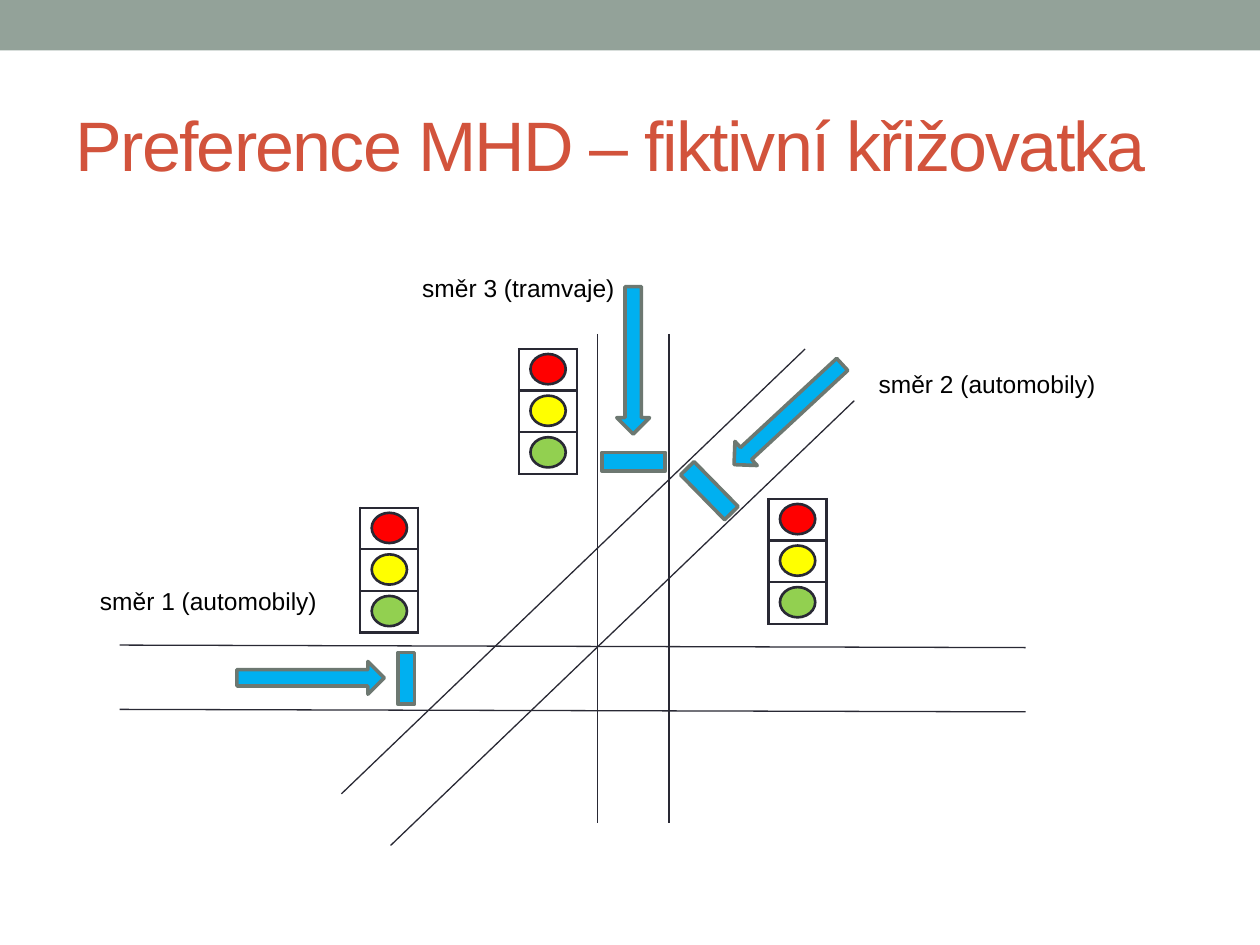
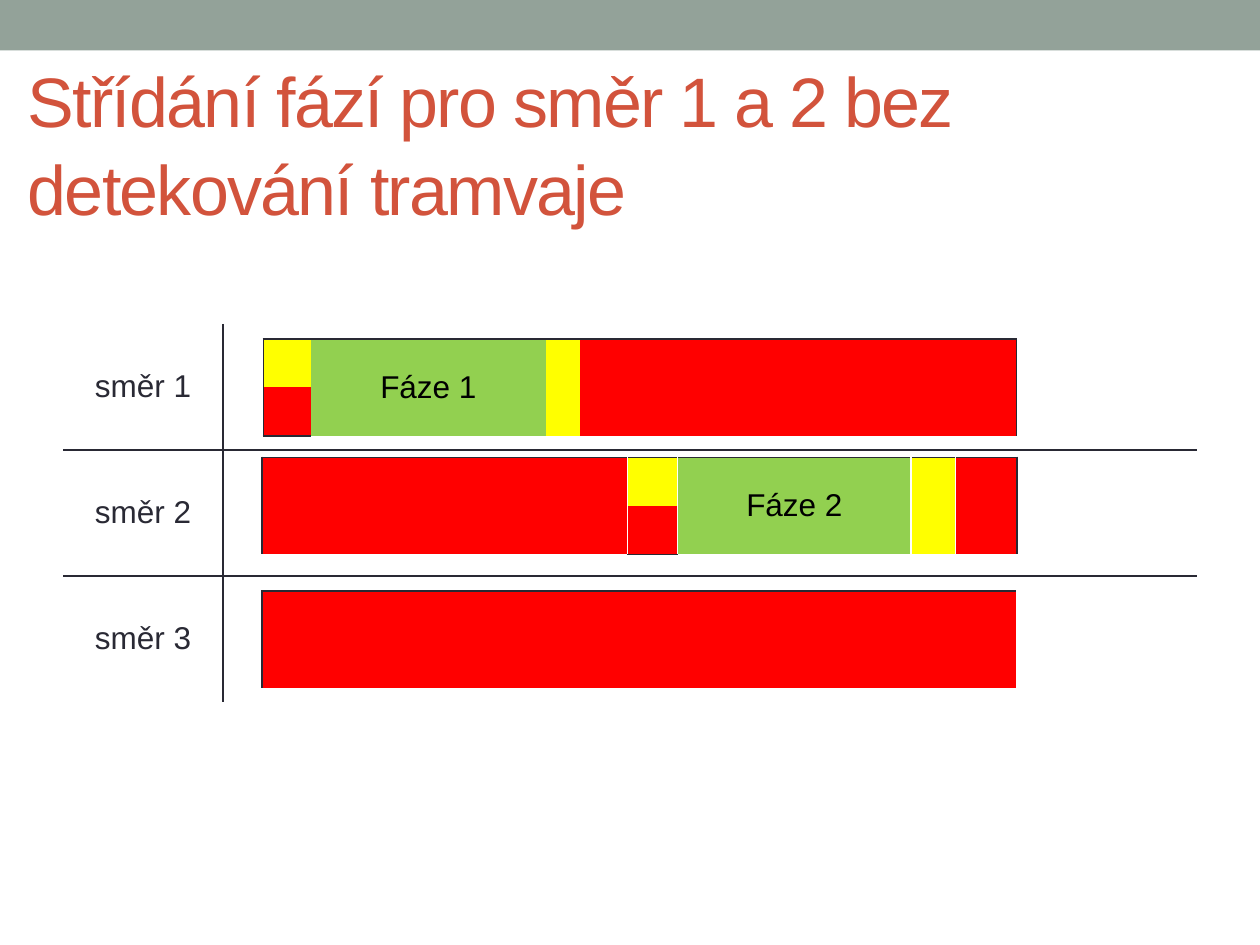
from lxml.etree import SubElement
from pptx import Presentation
from pptx.dml.color import RGBColor
from pptx.enum.shapes import MSO_CONNECTOR as Connector, MSO_SHAPE as Shape
from pptx.enum.text import MSO_ANCHOR as Anchor, MSO_AUTO_SIZE as AutoSize, PP_ALIGN as Align
from pptx.oxml.ns import qn
from pptx.util import Inches, Pt

FONT = "Arial"
BAND, TITLE, INK = "93A299", "D2533C", "292934"
BLACK, WHITE = "000000", "FFFFFF"
RED, YELLOW, GREEN = "FF0000", "FFFF00", "92D050"
BLUE, BLUE_EDGE = "00B0F0", "6D7871"
PLAIN_TABLE = "{2D5ABB26-0587-4C30-8999-92F81FD0307C}"


def rgb(code):
    return RGBColor.from_string(code)


def set_borders(cell, borders):
    """Draw cell borders; borders maps L, R, T, B to (colour, points)."""
    properties = cell._tc.get_or_add_tcPr()
    for side in "LRTB":
        if side in borders:
            color, width = borders[side]
            line = SubElement(properties, qn(f"a:ln{side}"), w=str(Pt(width)))
            fill = SubElement(line, qn("a:solidFill"))
            SubElement(fill, qn("a:srgbClr"), val=color)


class Deck:
    def __init__(self):
        self.deck = Presentation()
        self.deck.slide_width, self.deck.slide_height = Inches(10), Inches(7.5)
        self.page = None

    def add_text(self, frame, text, size, color, align=Align.CENTER):
        para = frame.paragraphs[0]
        para.alignment = align
        span = para.add_run()
        span.text = text
        span.font.size, span.font.name = Pt(size), FONT
        span.font.color.rgb = rgb(color)
        return para, span

    def add_page(self, title, left, width):
        self.page = self.deck.slides.add_slide(self.deck.slide_layouts[5])
        self.shape(Shape.RECTANGLE, 0, 0, 10, 0.4, BAND)
        box = self.page.shapes.title
        box.left, box.top = Inches(left), Inches(0.58)
        box.width, box.height = Inches(width), Inches(1.08)
        frame = box.text_frame
        frame.auto_size, frame.word_wrap = AutoSize.NONE, True
        frame.vertical_anchor = Anchor.MIDDLE
        para, span = self.add_text(frame, title, 40, TITLE, Align.LEFT)
        para.line_spacing = 1.05
        span.font._element.set("spc", "-100")

    def shape(self, kind, left, top, width, height, fill, edge=None, points=1.5, turn=0):
        shape = self.page.shapes.add_shape(
            kind, Inches(left), Inches(top), Inches(width), Inches(height))
        shape.shadow.inherit = False
        shape.rotation = turn
        shape.fill.solid()
        shape.fill.fore_color.rgb = rgb(fill)
        if edge:
            shape.line.color.rgb = rgb(edge)
            shape.line.width = Pt(points)
        else:
            shape.line.fill.background()

    def line(self, x1, y1, x2, y2):
        line = self.page.shapes.add_connector(
            Connector.STRAIGHT, Inches(x1), Inches(y1), Inches(x2), Inches(y2))
        line.line.color.rgb = rgb(INK)
        line.line.width = Pt(0.75)
        SubElement(line._element.spPr, qn("a:effectLst"))

    def label(self, text, left, top, width):
        box = self.page.shapes.add_textbox(
            Inches(left), Inches(top), Inches(width), Inches(0.34))
        box.text_frame.word_wrap = False
        self.add_text(box.text_frame, text, 14, BLACK)

    def table(self, left, top, widths, heights):
        frame = self.page.shapes.add_table(
            len(heights), len(widths), Inches(left), Inches(top),
            Inches(sum(widths)), Inches(sum(heights)))
        table = frame.table
        table._tbl.tblPr.find(qn("a:tableStyleId")).text = PLAIN_TABLE
        table.first_row = table.horz_banding = False
        for column, width in zip(table.columns, widths):
            column.width = Inches(width)
        for row, height in zip(table.rows, heights):
            row.height = Inches(height)
        for cell in table.iter_cells():
            cell.margin_top = cell.margin_bottom = 0
            cell.vertical_anchor = Anchor.MIDDLE
        return table

    def traffic_light(self, left, top):
        housing = self.table(left, top, [0.46], [0.33] * 3)
        for cell in housing.iter_cells():
            set_borders(cell, dict.fromkeys("LRTB", (INK, 1.5)))
            cell.fill.background()
        for index, color in enumerate((RED, YELLOW, GREEN)):
            self.shape(Shape.OVAL, left + 0.09, top + 0.04 + 0.33 * index,
                       0.28, 0.24, color, INK)

    def signal_bar(self, left, top, phases, separator=None, right=INK):
        """Each phase is (width, upper colour, lower colour, text)."""
        table = self.table(left, top, [phase[0] for phase in phases], [0.77 / 2] * 2)
        last = len(phases) - 1
        for column, (_, upper, lower, text) in enumerate(phases):
            for row, color in enumerate((upper, lower)):
                borders = {"TB"[row]: (INK, 1)}
                if separator:
                    borders.update(dict.fromkeys("LR", (separator, 0.75)))
                if column == 0:
                    borders["L"] = (INK, 1)
                if column == last:
                    borders["R"] = (right, 1)
                cell = table.cell(row, column)
                set_borders(cell, borders)
                cell.fill.solid()
                cell.fill.fore_color.rgb = rgb(color)
            if upper == lower:
                table.cell(0, column).merge(table.cell(1, column))
            if text:
                self.add_text(table.cell(0, column).text_frame, text, 18, BLACK)


def add_junction(deck):
    deck.add_page("Preference MHD – fiktivní křižovatka", 0.5, 9)

    # Road edges
    for y in (5.12, 5.63):
        deck.line(0.95, y, 8.14, y + 0.02)
    for x in (4.74, 5.31):
        deck.line(x, 2.65, x, 6.53)
    for x, y in ((6.39, 2.77), (6.78, 3.18)):
        deck.line(x, y, x - 3.68, y + 3.53)

    # Driving directions and stop lines
    for left, top, turn in ((1.88, 5.25, 0), (4.44, 2.73, 90), (5.67, 3.16, 137.2)):
        deck.shape(Shape.RIGHT_ARROW, left, top, 1.17, 0.26, BLUE, BLUE_EDGE, 2.08, turn)
    for left, top, width, height, turn in (
            (3.16, 5.18, 0.13, 0.41, 0),
            (4.78, 3.59, 0.5, 0.15, 0),
            (5.38, 3.82, 0.5, 0.15, 45.5)):
        deck.shape(Shape.RECTANGLE, left, top, width, height, BLUE, BLUE_EDGE, 2.08, turn)

    # Direction names
    deck.label("směr 1 (automobily)", 0.69, 4.6, 1.93)
    deck.label("směr 3 (tramvaje)", 3.25, 2.12, 1.73)
    deck.label("směr 2 (automobily)", 6.87, 2.88, 1.93)

    # Traffic lights
    for left, top in ((4.12, 2.77), (2.86, 4.03), (6.1, 3.96)):
        deck.traffic_light(left, top)


def add_phases(deck):
    deck.add_page("Střídání fází pro směr 1 a 2 bez detekování tramvaje", 0.12, 9.78)

    # Direction grid
    grid = deck.table(0.5, 2.57, [1.27, 7.73], [1] * 3)
    rule = (INK, 1)
    for row in range(3):
        for column in range(2):
            borders = {"RL"[column]: rule}
            if row > 0:
                borders["T"] = rule
            if row < 2:
                borders["B"] = rule
            set_borders(grid.cell(row, column), borders)
            grid.cell(row, column).fill.background()
        deck.add_text(grid.cell(row, 0).text_frame, f"směr {row + 1}", 18, INK)

    # Signal sequence of each direction
    deck.signal_bar(2.09, 2.69, [
        (0.38, YELLOW, RED, ""), (1.86, GREEN, GREEN, "Fáze 1"),
        (0.27, YELLOW, YELLOW, ""), (3.47, RED, RED, "")])
    deck.signal_bar(2.08, 3.63, [
        (2.9, RED, RED, ""), (0.4, YELLOW, RED, ""), (1.85, GREEN, GREEN, "Fáze 2"),
        (0.35, YELLOW, YELLOW, ""), (0.49, RED, RED, "")], separator=WHITE)
    deck.signal_bar(2.08, 4.69, [(5.99, RED, RED, "")], right=WHITE)


def main():
    deck = Deck()
    add_junction(deck)
    add_phases(deck)
    deck.deck.save("out.pptx")


if __name__ == "__main__":
    main()
